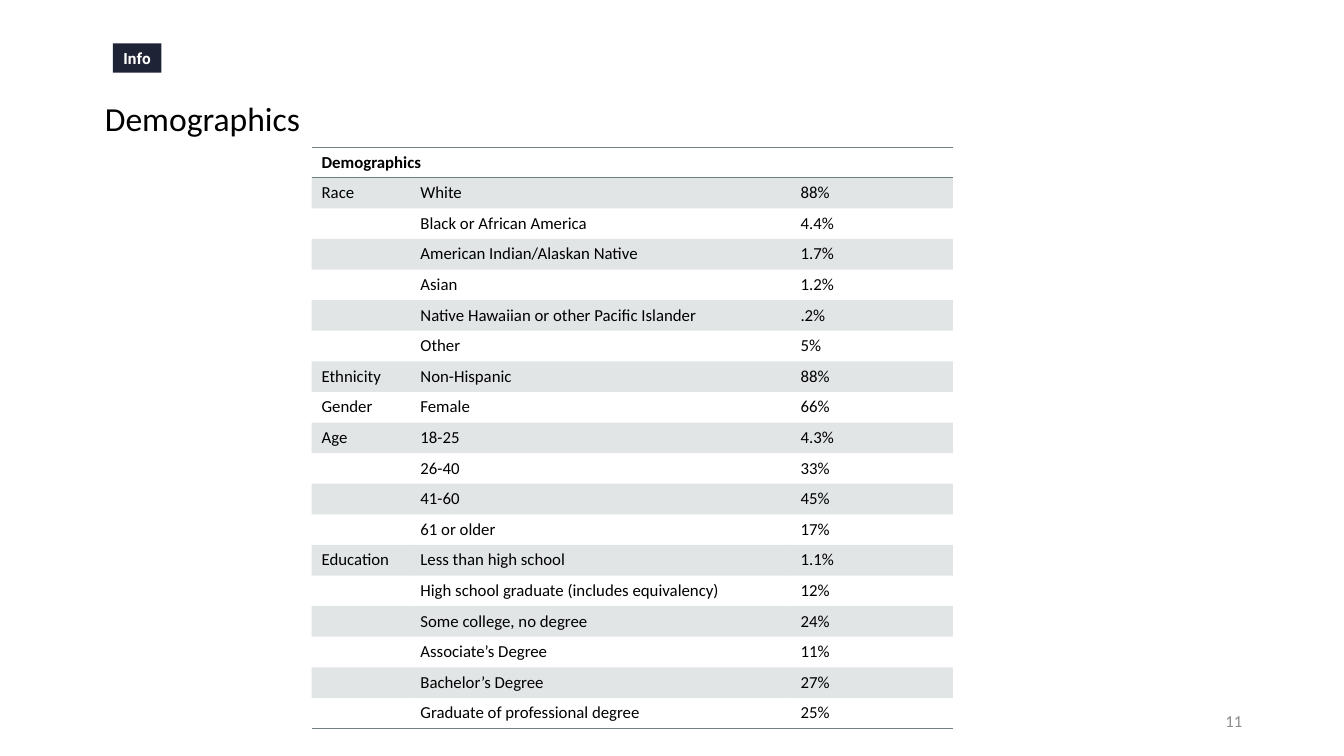
from lxml.etree import SubElement
from pptx import Presentation
from pptx.dml.color import RGBColor as RGB
from pptx.enum.shapes import MSO_SHAPE as Shape
from pptx.enum.text import MSO_ANCHOR as Anchor, PP_ALIGN as Align
from pptx.oxml import parse_xml
from pptx.oxml.ns import nsdecls, qn
from pptx.util import Inches, Pt

TITLE = "Demographics"
GROUPS = {
    "Race": [
        ("White", "88%"),
        ("Black or African America", "4.4%"),
        ("American Indian/Alaskan Native", "1.7%"),
        ("Asian", "1.2%"),
        ("Native Hawaiian or other Pacific Islander", ".2%"),
        ("Other", "5%"),
    ],
    "Ethnicity": [("Non-Hispanic", "88%")],
    "Gender": [("Female", "66%")],
    "Age": [
        ("18-25", "4.3%"),
        ("26-40", "33%"),
        ("41-60", "45%"),
        ("61 or older", "17%"),
    ],
    "Education": [
        ("Less than high school", "1.1%"),
        ("High school graduate (includes equivalency)", "12%"),
        ("Some college, no degree", "24%"),
        ("Associate’s Degree", "11%"),
        ("Bachelor’s Degree", "27%"),
        ("Graduate of professional degree", "25%"),
    ],
}
COLORS = {"text": "000000", "band": "6F8183", "tag": "1F2336",
          "light": "FFFFFF", "page": "8C8C8C"}
FONTS = {
    "title": dict(name="Calibri", size=Pt(24), bold=False, color="text"),
    "head": dict(name="Calibri", size=Pt(12), bold=True, color="text"),
    "cell": dict(name="Calibri", size=Pt(12), bold=False, color="text"),
    "tag": dict(name="Roboto", size=Pt(11), bold=True, color="light"),
    "page": dict(name="Calibri", size=Pt(12), bold=False, color="page"),
}
WIDTHS = (0.98, 3.77, 1.61)
ROW = 0.3
NO_STYLE = "{2D5ABB26-0587-4C30-8999-92F81FD0307C}"


def box(*nums):
    return [Inches(n) for n in nums]


def write(frame, text, kind, align=Align.LEFT):
    para = frame.paragraphs[0]
    para.text = text
    para.alignment = align
    for key, value in FONTS[kind].items():
        if key == "color":
            para.font.color.rgb = RGB.from_string(COLORS[value])
        else:
            setattr(para.font, key, value)


def rule(cell, side):
    """Draw the cell's top (T) or bottom (B) border; call before filling."""
    cell._tc.get_or_add_tcPr().append(parse_xml(
        f'<a:ln{side} {nsdecls("a")} w="12700"><a:solidFill>'
        f'<a:srgbClr val="{COLORS["band"]}"/></a:solidFill></a:ln{side}>'))


def shade(cell):
    cell.fill.solid()
    cell.fill.fore_color.rgb = RGB.from_string(COLORS["band"])
    tint = cell._tc.tcPr.find(qn("a:solidFill"))[0]
    SubElement(tint, qn("a:alpha"), val="20000")


def add_grid(slide):
    rows = [(TITLE, "", "")]
    for group, items in GROUPS.items():
        rows += [("" if i else group, *item) for i, item in enumerate(items)]
    last = len(rows) - 1
    table = slide.shapes.add_table(
        len(rows), len(WIDTHS),
        *box(3.09, 1.46, sum(WIDTHS), ROW * len(rows))).table
    props = table._tbl.tblPr
    props.find(qn("a:tableStyleId")).text = NO_STYLE
    for col, width in zip(table.columns, WIDTHS):
        col.width = Inches(width)
    for r, row in enumerate(rows):
        table.rows[r].height = Inches(ROW)
        for c, text in enumerate(row):
            cell = table.cell(r, c)
            write(cell.text_frame, text, "cell" if r else "head")
            if r == 0:
                rule(cell, "T")
            if r in (0, last):
                rule(cell, "B")
            if r % 2:
                shade(cell)
            else:
                cell.fill.background()
    table.cell(0, 0).merge(table.cell(0, 1))


def main():
    deck = Presentation()
    deck.slide_width, deck.slide_height = box(13.33, 7.5)
    slide = deck.slides.add_slide(deck.slide_layouts[5])

    title = slide.shapes.title
    title.left, title.top, title.width, title.height = box(0.94, 0.92, 2.16, 0.5)
    title.text_frame.word_wrap = False
    title.text_frame.vertical_anchor = Anchor.MIDDLE
    write(title.text_frame, TITLE, "title")

    add_grid(slide)

    tag = slide.shapes.add_shape(Shape.RECTANGLE, *box(1.12, 0.43, 0.48, 0.29))
    tag.shadow.inherit = False
    tag.fill.solid()
    tag.fill.fore_color.rgb = RGB.from_string(COLORS["tag"])
    tag.line.fill.background()
    tag.text_frame.word_wrap = False
    write(tag.text_frame, "Info", "tag", Align.CENTER)

    page = slide.shapes.add_textbox(*box(9.42, 6.95, 3, 0.4)).text_frame
    page.word_wrap = True
    page.vertical_anchor = Anchor.MIDDLE
    write(page, "11", "page", Align.RIGHT)

    deck.save("out.pptx")


if __name__ == "__main__":
    main()
